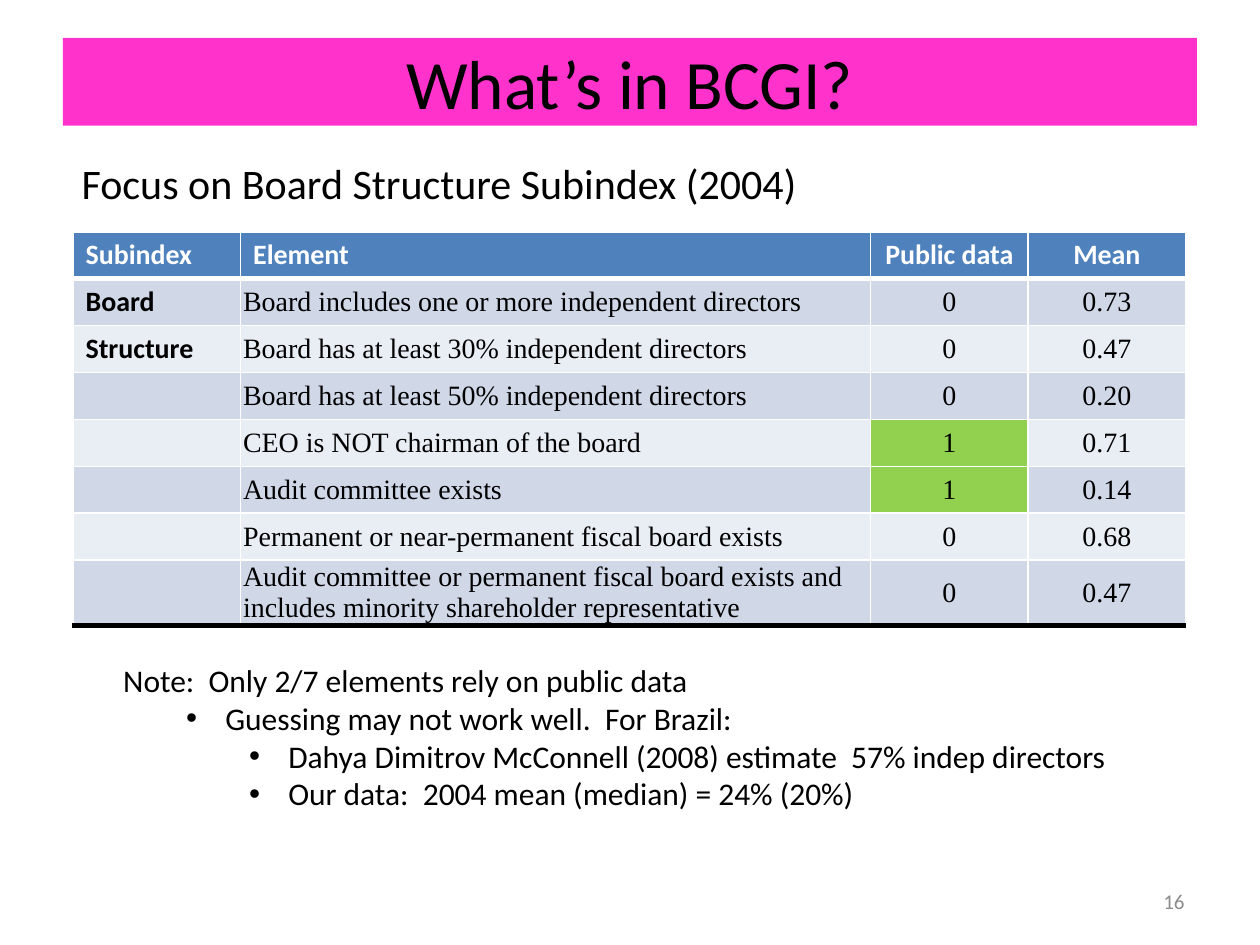
from typing import NamedTuple

from lxml.etree import SubElement
from pptx import Presentation
from pptx.dml.color import RGBColor
from pptx.enum.shapes import MSO_SHAPE
from pptx.enum.text import MSO_ANCHOR, PP_ALIGN
from pptx.oxml.ns import qn
from pptx.util import Inches, Pt

BLACK = RGBColor(0x00, 0x00, 0x00)
WHITE = RGBColor(0xFF, 0xFF, 0xFF)
PINK = RGBColor(0xFF, 0x33, 0xCC)
GREY = RGBColor(0x8C, 0x8C, 0x8C)
BLUE = RGBColor(0x4F, 0x81, 0xBD)
GREEN = RGBColor(0x92, 0xD0, 0x50)
BANDS = (RGBColor(0xD0, 0xD8, 0xE8), RGBColor(0xE9, 0xED, 0xF4))
SANS, SERIF = "Calibri", "Times New Roman"

SLIDE_W, SLIDE_H = 10, 7.5
COLS = (1.33, 5, 1.25, 1.25)
ROW_H, LAST_ROW_H = 0.37, 0.52
TABLE_PT = 16
HEADER = ("Subindex", "Element", "Public data", "Mean")


class Box(NamedTuple):
    """Place as shares of the slide's width and height."""
    x: float
    y: float
    w: float
    h: float

    def emu(self) -> tuple:
        return (Inches(self.x * SLIDE_W), Inches(self.y * SLIDE_H),
                Inches(self.w * SLIDE_W), Inches(self.h * SLIDE_H))


class Element(NamedTuple):
    group: str
    name: str
    public: int
    mean: str


class Line(NamedTuple):
    text: str
    level: int = 0


ELEMENTS = (
    Element("Board", "Board includes one or more independent directors", 0, "0.73"),
    Element("Structure", "Board has at least 30% independent directors", 0, "0.47"),
    Element("", "Board has at least 50% independent directors", 0, "0.20"),
    Element("", "CEO is NOT chairman of the board", 1, "0.71"),
    Element("", "Audit committee exists", 1, "0.14"),
    Element("", "Permanent or near-permanent fiscal board exists", 0, "0.68"),
    Element("", "Audit committee or permanent fiscal board exists and "
            "includes minority shareholder representative", 0, "0.47"),
)
NOTES = (
    Line("Note:  Only 2/7 elements rely on public data"),
    Line("Guessing may not work well.  For Brazil:", 1),
    Line("Dahya Dimitrov McConnell (2008) estimate  57% indep directors", 2),
    Line("Our data:  2004 mean (median) = 24% (20%)", 2),
)


def style(p, size: float, color: RGBColor = BLACK, font: str = SANS,
          bold: bool = False, align: PP_ALIGN = PP_ALIGN.LEFT) -> None:
    p.alignment = align
    for r in p.runs:
        r.font.size, r.font.name, r.font.bold = Pt(size), font, bold
        r.font.color.rgb = color


def add_text(s, box: Box, text: str, size: float, color: RGBColor = BLACK,
             align: PP_ALIGN = PP_ALIGN.LEFT, wrap: bool = True,
             anchor: MSO_ANCHOR = MSO_ANCHOR.TOP):
    tf = s.shapes.add_textbox(*box.emu()).text_frame
    tf.word_wrap, tf.vertical_anchor = wrap, anchor
    tf.text = text
    for p in tf.paragraphs:
        style(p, size, color, align=align)
    return tf


def add_title(s, box: Box, text: str) -> None:
    sp = s.shapes.add_shape(MSO_SHAPE.RECTANGLE, *box.emu())
    sp.shadow.inherit = False
    sp.fill.solid()
    sp.fill.fore_color.rgb = PINK
    sp.line.fill.background()
    tf = sp.text_frame
    tf.vertical_anchor = MSO_ANCHOR.MIDDLE
    tf.text = text
    style(tf.paragraphs[0], 39.6, align=PP_ALIGN.CENTER)


def bullet(p, level: int) -> None:
    p.level = level
    pPr = p._p.get_or_add_pPr()
    pPr.set("marL", str(Inches(0.31 + 0.5 * level)))
    pPr.set("indent", str(Inches(-0.31)))
    SubElement(pPr, qn("a:buFont"), typeface="Arial")
    SubElement(pPr, qn("a:buChar"), char="•")


def set_borders(cell, bottom: RGBColor, bottom_pt: float) -> None:
    tcPr = cell._tc.get_or_add_tcPr()
    for side in "LRTB":
        color, width = (bottom, bottom_pt) if side == "B" else (WHITE, 1)
        ln = SubElement(tcPr, qn(f"a:ln{side}"), w=str(Pt(width)))
        SubElement(SubElement(ln, qn("a:solidFill")), qn("a:srgbClr"), val=str(color))


def fill_cell(cell, text: str, fill: RGBColor, row: int, col: int) -> None:
    last = row == len(ELEMENTS)
    set_borders(cell, BLACK if last else WHITE, 3 if last or row == 0 else 1)
    cell.fill.solid()
    cell.fill.fore_color.rgb = fill
    cell.vertical_anchor = MSO_ANCHOR.MIDDLE
    p = cell.text_frame.paragraphs[0]
    if not text:
        # An empty cell still needs the table's text size to keep its row low
        SubElement(p._p, qn("a:endParaRPr"), sz=str(TABLE_PT * 100))
        return
    p.text = text
    label = row == 0 or col == 0
    if not label:
        cell.margin_left = cell.margin_right = Inches(0.02)
        cell.margin_top = cell.margin_bottom = 0
    style(p, TABLE_PT, WHITE if row == 0 else BLACK, SANS if label else SERIF,
          label, PP_ALIGN.CENTER if col > 1 else PP_ALIGN.LEFT)


def add_element_table(s, left: float, top: float) -> None:
    heights = [ROW_H] * len(ELEMENTS) + [LAST_ROW_H]
    table = s.shapes.add_table(len(heights), len(COLS), Inches(left), Inches(top),
                               Inches(sum(COLS)), Inches(sum(heights))).table
    for column, width in zip(table.columns, COLS):
        column.width = Inches(width)
    for row, height in zip(table.rows, heights):
        row.height = Inches(height)
    for col, text in enumerate(HEADER):
        fill_cell(table.cell(0, col), text, BLUE, 0, col)
    for row, element in enumerate(ELEMENTS, 1):
        for col, value in enumerate(element):
            is_public = col == 2 and element.public
            fill = GREEN if is_public else BANDS[(row - 1) % 2]
            fill_cell(table.cell(row, col), str(value), fill, row, col)


def main() -> None:
    prs = Presentation()
    prs.slide_width, prs.slide_height = Inches(SLIDE_W), Inches(SLIDE_H)
    s = prs.slides.add_slide(prs.slide_layouts[6])

    # Title band, table and its heading
    add_title(s, Box(0.05, 0.04, 0.9, 0.093), "What’s in BCGI?")
    add_element_table(s, 0.58, 1.84)
    add_text(s, Box(0.055, 0.16, 0.593, 0.067),
             "Focus on Board Structure Subindex (2004)", 24, wrap=False)

    # Notes below the table
    tf = add_text(s, Box(0.088, 0.693, 0.837, 0.175),
                  "\n".join(line.text for line in NOTES), 18)
    for p, line in zip(tf.paragraphs, NOTES):
        if line.level:
            bullet(p, line.level)

    # Slide number
    add_text(s, Box(0.717, 0.927, 0.233, 0.053), "16", 12, GREY,
             PP_ALIGN.RIGHT, anchor=MSO_ANCHOR.MIDDLE)
    prs.save("out.pptx")


if __name__ == "__main__":
    main()
